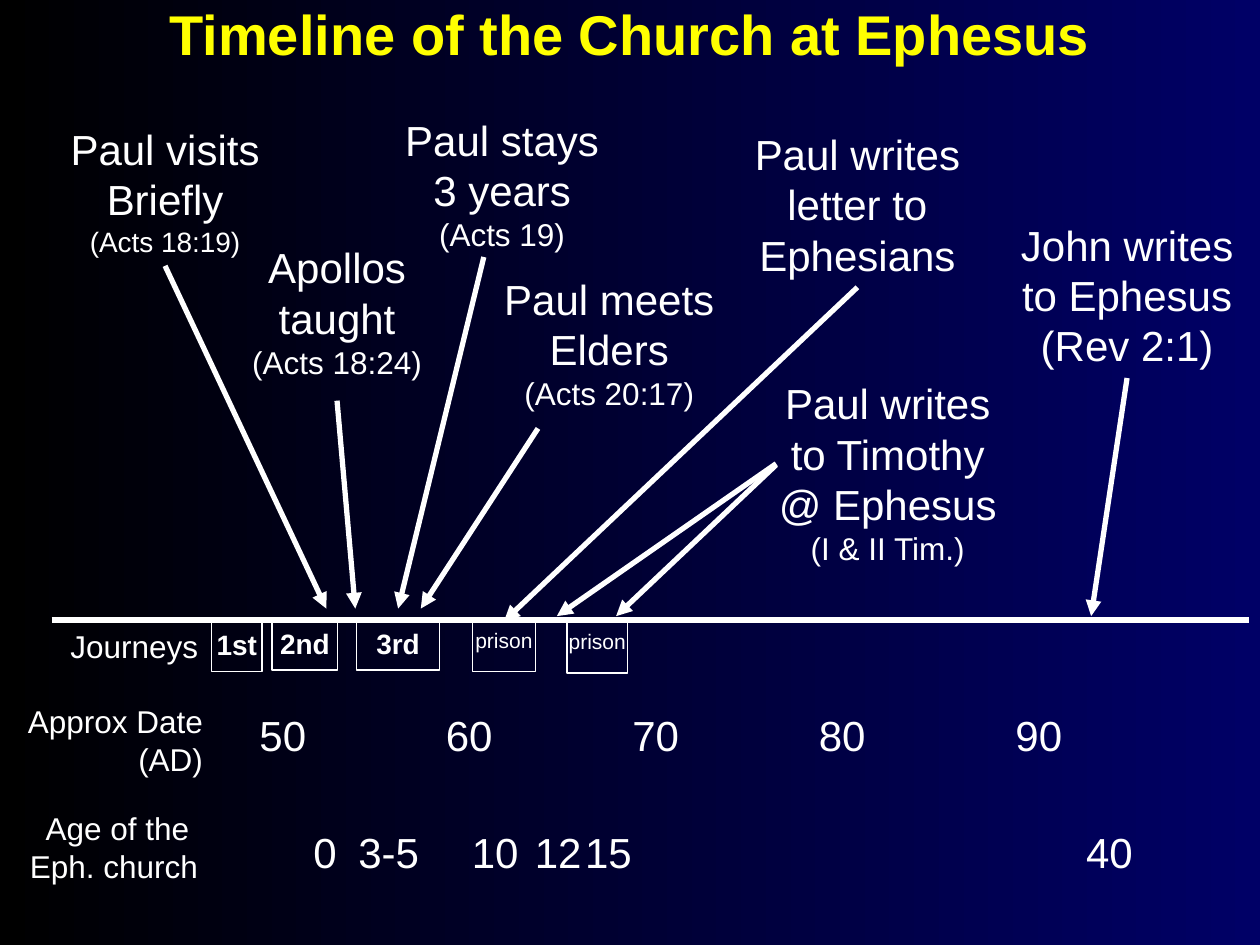
import pptx
import pptx.dml.color
import pptx.enum.shapes
import pptx.enum.text
import pptx.util
from lxml import etree

ALIGN = pptx.enum.text.PP_ALIGN
AUTO_SIZE = pptx.enum.text.MSO_AUTO_SIZE
BOTTOM = 2


def colour(hex_text):
    return pptx.dml.color.RGBColor.from_string(hex_text)


class TimelineSlide:
    """Style and current slide; lengths are columns and rows of a 100 x 75 grid."""
    font, ink, accent = "Arial", "FFFFFF", "FFFF00"
    night, blue = "000000", "000066"
    columns, rows = 100, 75

    def __init__(self, deck):
        self.column = deck.slide_width / self.columns
        self.row = deck.slide_height / self.rows
        self.slide = deck.slides.add_slide(deck.slide_layouts[5])
        self.shapes = self.slide.shapes

    def place(self, *lengths):
        units = (self.column, self.row) * 2
        return [round(length * unit) for length, unit in zip(lengths, units)]

    def background(self):
        fill = self.slide.background.fill
        fill.gradient()
        fill.gradient_angle = 0
        for stop, shade, position in zip(fill.gradient_stops, (self.night, self.blue), (0, 1)):
            stop.color.rgb = colour(shade)
            stop.position = position

    def set_lines(self, frame, lines, align, bold=False, ink=None):
        """Fill a frame with (text, size) lines, one paragraph each."""
        frame.text = "\n".join(text for text, size in lines)
        for paragraph, (text, size) in zip(frame.paragraphs, lines):
            paragraph.alignment = align
            for run in paragraph.runs:
                run.font.name = self.font
                run.font.size = pptx.util.Pt(size)
                run.font.bold = bold
                run.font.color.rgb = colour(ink or self.ink)

    def title(self, text, place):
        title = self.shapes.title
        title.left, title.top, title.width, title.height = self.place(*place)
        title.text_frame.auto_size = AUTO_SIZE.NONE
        title.text_frame.vertical_anchor = pptx.enum.text.MSO_ANCHOR.MIDDLE
        self.set_lines(title.text_frame, [(text, 32)], ALIGN.CENTER, True, self.accent)

    def label(self, lines, place, align=ALIGN.CENTER, wrap=False, grow=False):
        label = self.shapes.add_textbox(*self.place(*place))
        label.text_frame.word_wrap = wrap
        label.text_frame.auto_size = AUTO_SIZE.SHAPE_TO_FIT_TEXT if grow else AUTO_SIZE.NONE
        self.set_lines(label.text_frame, lines, align)
        return label

    def period(self, text, size, bold, place):
        box = self.shapes.add_shape(
            pptx.enum.shapes.MSO_SHAPE.RECTANGLE, *self.place(*place))
        box.shadow.inherit = False
        box.fill.background()
        box.line.color.rgb = colour(self.ink)
        box.line.width = pptx.util.Pt(1)
        box.text_frame.word_wrap = False
        box.text_frame.vertical_anchor = pptx.enum.text.MSO_ANCHOR.TOP
        self.set_lines(box.text_frame, [(text, size)], ALIGN.CENTER, bold)

    def line(self, start, end, arrow=True, source=None):
        line = self.shapes.add_connector(
            pptx.enum.shapes.MSO_CONNECTOR.STRAIGHT, *self.place(*start, *end))
        line.line.color.rgb = colour(self.ink)
        line.line.width = pptx.util.Pt(3)
        properties = line.element.spPr
        namespace = "{%s}" % properties.nsmap["a"]
        if arrow:
            outline = properties.find(namespace + "ln")
            etree.SubElement(outline, namespace + "tailEnd", type="triangle")
        etree.SubElement(properties, namespace + "effectLst")
        if source is not None:
            line.begin_connect(source, BOTTOM)


def main():
    deck = pptx.Presentation()
    deck.slide_width = pptx.util.Inches(10)
    deck.slide_height = pptx.util.Inches(7.5)
    timeline = TimelineSlide(deck)
    timeline.background()
    timeline.title("Timeline of the Church at Ephesus", (7.5, 0, 85, 5.3))

    # Time axis with journeys and imprisonments
    timeline.line((4.1, 49.2), (99.1, 49.2), arrow=False)
    for text, size, bold, left, top, width in [
            ("1st", 16, True, 16.8, 49.3, 4), ("2nd", 16, True, 21.6, 49.2, 5.2),
            ("3rd", 16, True, 28.3, 49.2, 6.6), ("prison", 12, False, 37.5, 49.3, 5),
            ("prison", 12, False, 45, 49.4, 4.8)]:
        timeline.period(text, size, bold, (left, top, width, 4))

    # Row headings
    for texts, align, place in [
            (["Journeys"], ALIGN.LEFT, (4.6, 49.3, 12.3, 4)),
            (["Approx Date", "(AD)"], ALIGN.RIGHT, (1.1, 55.2, 16, 7.1)),
            (["Age of the ", "Eph. church"], ALIGN.RIGHT, (0.5, 63.7, 16.2, 7.1))]:
        timeline.label([(text, 18) for text in texts], place, align, grow=True)

    # Dates and ages, by centre column
    dates = [("50", 22.45), ("60", 37.25), ("70", 52.05), ("80", 66.85), ("90", 82.45)]
    ages = [("0", 25.8), ("3-5", 30.85), ("10", 39.3), ("12", 44.3), ("15", 48.3), ("40", 88.05)]
    for top, numbers in ((55.8, dates), (65.1, ages)):
        for number, centre in numbers:
            timeline.label([(number, 24)], (centre - 4.15, top, 8.3, 4))

    # Events: lines of text, place, then (start, end, joined) for each arrow
    events = [
        ([("Paul stays 3 years", 24), ("(Acts 19)", 18)], (30.8, 8.6, 18.1, 12.1),
         [((38.4, 20.4), (31.6, 48.3), False)]),
        ([("Paul visits", 24), ("Briefly", 24), ("(Acts 18:19)", 16)], (3.7, 9.3, 18.8, 11.8),
         [((13.1, 21.1), (25.9, 48.3), True)]),
        ([("Apollos taught", 24), ("(Acts 18:24)", 18)], (16.8, 18.7, 19.9, 13.1),
         [((26.7, 31.8), (28.2, 48.3), True)]),
        ([("Paul writes letter to Ephesians", 24)], (58.1, 9.7, 19.9, 13.1),
         [((68, 22.8), (40, 49.3), True)]),
        ([("Paul meets Elders", 24), ("(Acts 20:17)", 18)], (38.4, 21.2, 19.9, 12.4),
         [((42.7, 34), (33.4, 48.3), False)]),
        ([("Paul writes to Timothy @ Ephesus", 24), ("(I & II Tim.)", 18)],
         (60.5, 29.5, 19.9, 16.5),
         [((61.6, 36.8), (44.2, 48.9), False), ((61.6, 36.9), (48.9, 48.9), False)]),
        ([("John writes to Ephesus", 24), ("(Rev 2:1)", 24)], (79.7, 16.9, 19.5, 13.1),
         [((89.4, 30), (86.6, 48.9), True)]),
    ]
    for lines, place, arrows in events:
        event = timeline.label(lines, place, wrap=True, grow=True)
        for start, end, joined in arrows:
            timeline.line(start, end, source=event if joined else None)

    deck.save("out.pptx")


if __name__ == "__main__":
    main()
